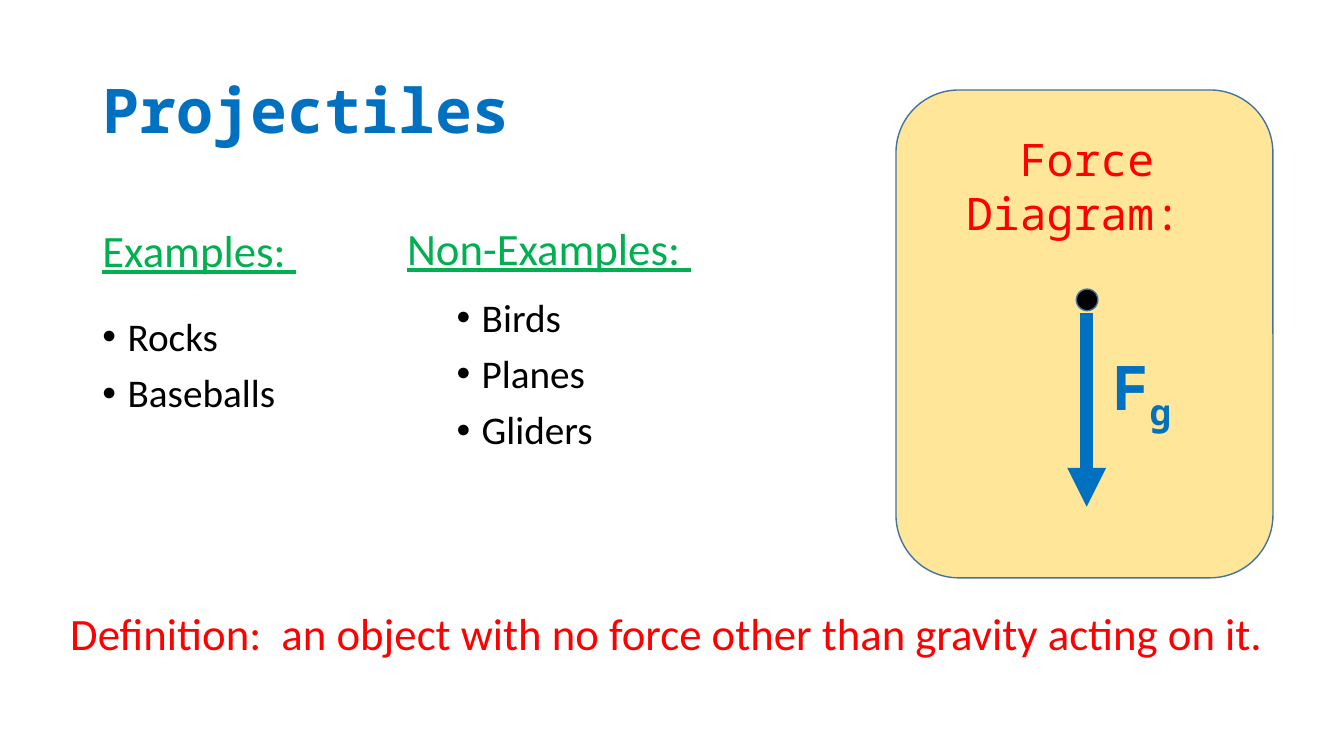
import pptx
import pptx.util
import pptx.dml.color
import pptx.enum.shapes
import pptx.enum.text
import pptx.oxml
import pptx.oxml.ns

Pt = pptx.util.Pt
SHAPE = pptx.enum.shapes.MSO_SHAPE
ALIGN = pptx.enum.text.PP_ALIGN
ANCHOR = pptx.enum.text.MSO_ANCHOR
FIT = pptx.enum.text.MSO_AUTO_SIZE

COLORS = {"blue": "0070C0", "green": "00B050", "red": "FF0000",
          "black": "000000", "sand": "FFE699", "edge": "43739E"}
SANS, MONO = "Calibri", "Noto Sans Mono"

TITLE = ("Projectiles", (66, 28.75, 828, 104.4))
LISTS = [
    (["Rocks", "Baseballs"], (66, 223.2, 457.2, 138)),
    (["Birds", "Planes", "Gliders"], (319, 209.5, 457.2, 138)),
]
LABELS = [
    ("Examples: ", (66, 155.5, 288, 46), "green", ALIGN.LEFT),
    ("Non-Examples: ", (283.7, 154, 288, 46), "green", ALIGN.LEFT),
    ("Definition:  an object with no force other than gravity acting on it. ",
     (0, 429, 960, 46), "red", ALIGN.CENTER),
]
PANEL = (640, 64.3, 269.3, 348.5)
HEAD = ("Force Diagram: ", (666.7, 90.7, 219.6, 85))
FORCE = (("F", "g"), (787.7, 224.6, 126, 104.4))
DOT = (768.8, 206.5, 15.4, 15.4)
ARROW = (776.2, 223.4, 776.2, 362)


def points(box):
    return [Pt(n) for n in box]


def tint(name):
    return pptx.dml.color.RGBColor.from_string(COLORS[name])


def style(par, size, face, color, bold=False, line=False):
    for run in par.runs:
        font = run.font
        font.size, font.name = Pt(size), face
        font.bold, font.underline = bold, line
        font.color.rgb = tint(color)


def place(shape, box):
    shape.left, shape.top, shape.width, shape.height = points(box)


def write(shapes, box, text):
    frame = shapes.add_textbox(*points(box)).text_frame
    frame.word_wrap = True
    frame.text = text
    return frame


def fill_list(frame, items):
    frame.word_wrap = True
    frame.auto_size = FIT.NONE
    frame.vertical_anchor = ANCHOR.TOP
    frame.text = "\n".join(items)
    for i, par in enumerate(frame.paragraphs):
        par.line_spacing = 0.9
        par.space_before = Pt(10 if i else 0)
        props = par._p.get_or_add_pPr()
        props.set("marL", str(Pt(18)))
        props.set("indent", str(-Pt(18)))
        for tag, key, val in (("buFont", "typeface", "Arial"), ("buChar", "char", "•")):
            pptx.oxml.ns.qn("a:" + tag)
            node = pptx.oxml.parse_xml(
                f'<a:{tag} {pptx.oxml.ns.nsdecls("a")} {key}="{val}"/>')
            props.append(node)
        style(par, 28, SANS, "black")


def draw(shapes, kind, box, fill):
    shape = shapes.add_shape(kind, *points(box))
    shape.shadow.inherit = False
    shape.fill.solid()
    shape.fill.fore_color.rgb = tint(fill)
    shape.line.color.rgb = tint("edge")
    shape.line.width = Pt(1)


def add_arrow(shapes, ends):
    arrow = shapes.add_connector(
        pptx.enum.shapes.MSO_CONNECTOR.STRAIGHT, *points(ends))
    arrow.line.color.rgb = tint("blue")
    arrow.line.width = Pt(9.25)
    space = pptx.oxml.ns.nsdecls("a")
    arrow.line._get_or_add_ln().append(
        pptx.oxml.parse_xml(f'<a:tailEnd {space} type="triangle"/>'))
    arrow._element.spPr.append(pptx.oxml.parse_xml(f"<a:effectLst {space}/>"))


def add_panel(slide):
    shapes = slide.shapes.add_group_shape().shapes
    draw(shapes, SHAPE.ROUNDED_RECTANGLE, PANEL, "sand")
    text, box = HEAD
    par = write(shapes, box, text).paragraphs[0]
    par.alignment = ALIGN.CENTER
    style(par, 32, MONO, "red")
    add_arrow(shapes, ARROW)
    draw(shapes, SHAPE.OVAL, DOT, "black")
    (main, sub), box = FORCE
    frame = write(shapes, box, main)
    frame.vertical_anchor = ANCHOR.MIDDLE
    par = frame.paragraphs[0]
    par.line_spacing = 0.9
    low = par.add_run()
    low.text = sub
    style(par, 44, MONO, "blue", bold=True)
    low.font._element.set("baseline", "-25000")


def main():
    deck = pptx.Presentation()
    deck.slide_width, deck.slide_height = Pt(960), Pt(540)
    slide = deck.slides.add_slide(deck.slide_layouts[1])

    title = slide.shapes.title
    text, box = TITLE
    place(title, box)
    title.text_frame.text = text
    title.text_frame.vertical_anchor = ANCHOR.MIDDLE
    par = title.text_frame.paragraphs[0]
    par.alignment = ALIGN.LEFT
    par.line_spacing = 0.9
    style(par, 44, MONO, "blue", bold=True)

    body = slide.placeholders[1]
    other = slide.shapes.add_textbox(0, 0, 0, 0)
    for shape, (items, box) in zip((body, other), LISTS):
        place(shape, box)
        fill_list(shape.text_frame, items)

    for text, box, color, align in LABELS:
        par = write(slide.shapes, box, text).paragraphs[0]
        par.alignment = align
        style(par, 32, SANS, color, line=color == "green")

    add_panel(slide)
    deck.save("out.pptx")


if __name__ == "__main__":
    main()
